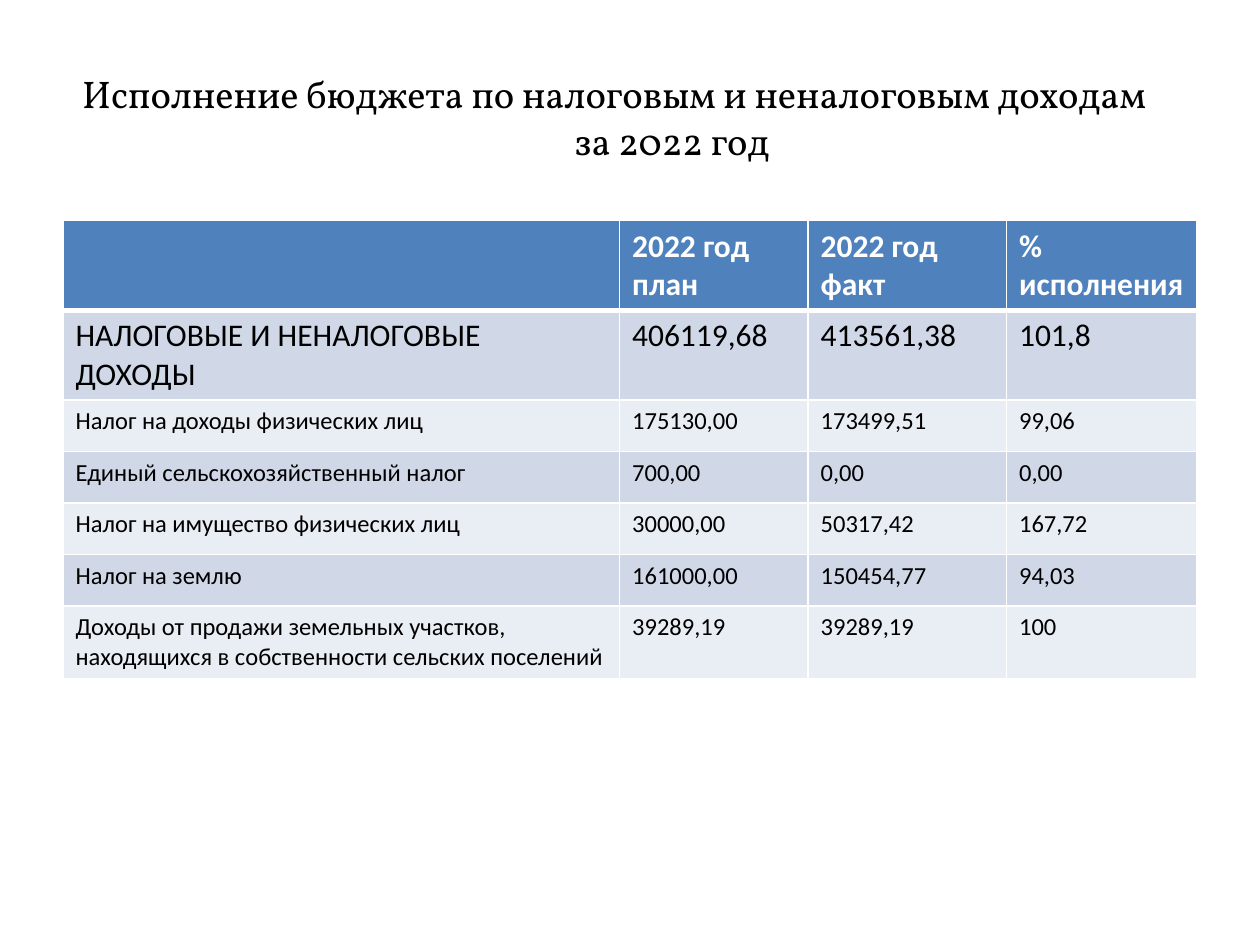
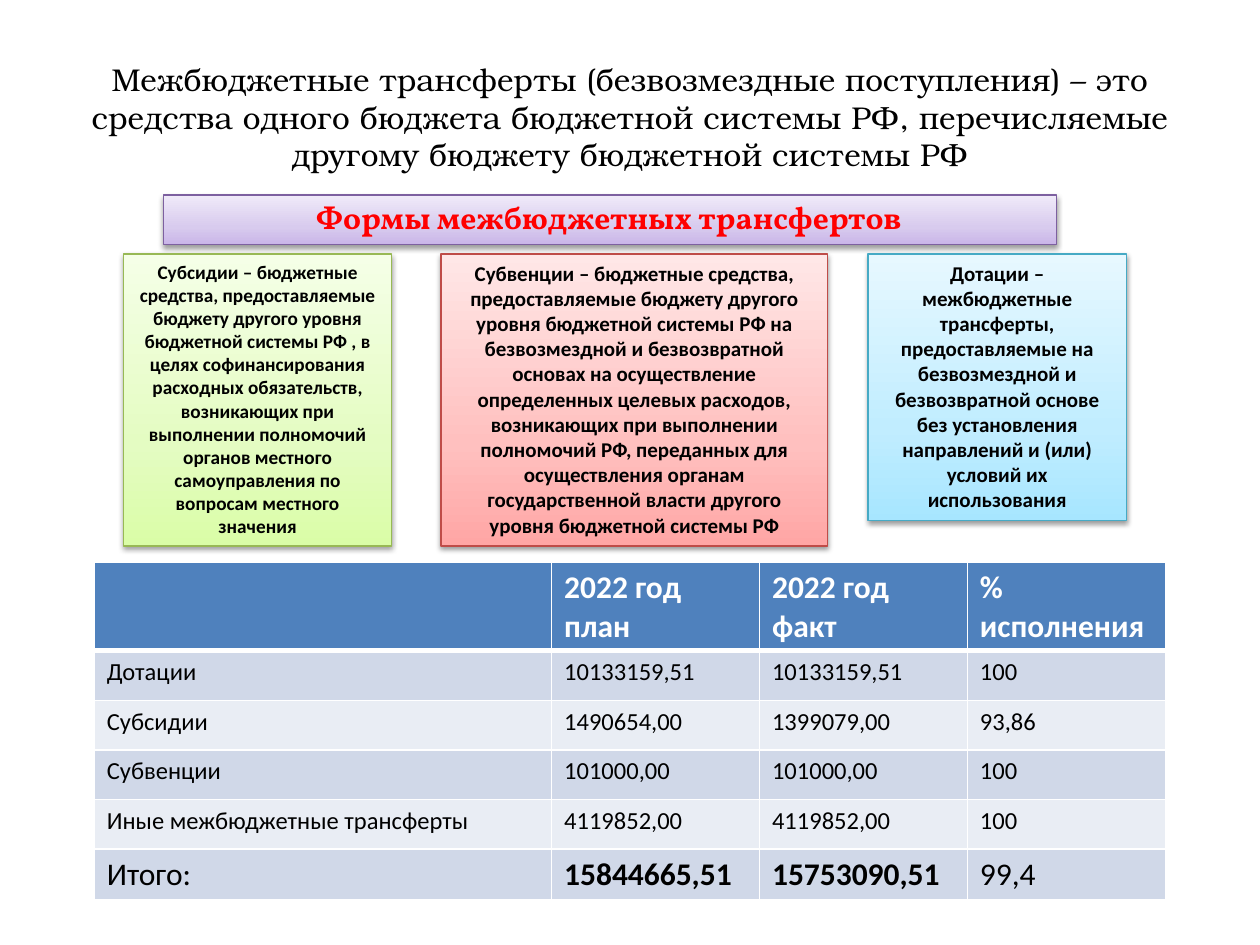
from lxml.etree import SubElement
from pptx import Presentation
from pptx.dml.color import RGBColor
from pptx.enum.shapes import MSO_SHAPE
from pptx.enum.text import MSO_ANCHOR, MSO_AUTO_SIZE, PP_ALIGN
from pptx.oxml import parse_xml
from pptx.oxml.ns import nsdecls, qn
from pptx.util import Cm, Pt

WHITE = RGBColor(0xFF, 0xFF, 0xFF)
BLACK = RGBColor(0x00, 0x00, 0x00)
RED = RGBColor(0xFF, 0x00, 0x00)
HEADER_BLUE = RGBColor(0x4F, 0x81, 0xBD)
BAND_DARK = RGBColor(0xD0, 0xD8, 0xE8)
BAND_LIGHT = RGBColor(0xE9, 0xED, 0xF4)

PURPLE_LINE = RGBColor(0x7D, 0x60, 0xA0)
GREEN_LINE = RGBColor(0x98, 0xB9, 0x55)
PINK_LINE = RGBColor(0xBF, 0x4C, 0x48)
CYAN_LINE = RGBColor(0x46, 0xAA, 0xC5)
PURPLE = (RGBColor(0xC9, 0xB5, 0xE8), RGBColor(0xD8, 0xCB, 0xEE), RGBColor(0xF0, 0xEA, 0xF9))
GREEN = (RGBColor(0xDA, 0xFD, 0xA7), RGBColor(0xE4, 0xFC, 0xC2), RGBColor(0xF5, 0xFF, 0xE7))
PINK = (RGBColor(0xFF, 0xA6, 0xA5), RGBColor(0xFF, 0xC0, 0xBF), RGBColor(0xFF, 0xE7, 0xE7))
CYAN = (RGBColor(0xA7, 0xE6, 0xFF), RGBColor(0xC1, 0xED, 0xFF), RGBColor(0xE7, 0xF8, 0xFF))
GRADIENT_POSITIONS = (0, 35, 100)

HEADER = ("", "2022 год план", "2022 год факт", "% исполнения")
INCOME_TITLE = ("Исполнение бюджета по налоговым и неналоговым доходам", "за 2022 год")
INCOME_ROWS = [
    ("НАЛОГОВЫЕ И НЕНАЛОГОВЫЕ ДОХОДЫ", "406119,68", "413561,38", "101,8"),
    ("Налог на доходы физических лиц", "175130,00", "173499,51", "99,06"),
    ("Единый сельскохозяйственный налог", "700,00", "0,00", "0,00"),
    ("Налог на имущество физических лиц", "30000,00", "50317,42", "167,72"),
    ("Налог на землю", "161000,00", "150454,77", "94,03"),
    ("Доходы от продажи земельных участков, находящихся в собственности сельских поселений",
     "39289,19", "39289,19", "100"),
]

TRANSFER_TITLE = (
    "Межбюджетные трансферты (безвозмездные поступления) – это средства одного бюджета "
    "бюджетной системы РФ, перечисляемые другому бюджету бюджетной системы РФ",
)
TRANSFER_HEADING = "Формы межбюджетных трансфертов"
TRANSFER_FORMS = [
    ("Субсидии – бюджетные средства, предоставляемые бюджету другого уровня бюджетной "
     "системы РФ , в целях софинансирования расходных обязательств, возникающих при "
     "выполнении полномочий органов местного самоуправления по вопросам местного значения",
     11, 2.49, 5.41, 5.89, GREEN, GREEN_LINE),
    ("Субвенции – бюджетные средства, предоставляемые бюджету другого уровня бюджетной "
     "системы РФ на безвозмездной и безвозвратной основах на осуществление определенных "
     "целевых расходов, возникающих при выполнении полномочий РФ, переданных для "
     "осуществления органам государственной власти другого уровня бюджетной системы РФ",
     12, 8.89, 7.8, 5.89, PINK, PINK_LINE),
    ("Дотации – межбюджетные трансферты, предоставляемые на безвозмездной и безвозвратной "
     "основе без установления направлений и (или) условий их использования",
     12, 17.5, 5.21, 5.38, CYAN, CYAN_LINE),
]
TRANSFER_ROWS = [
    ("Дотации", "10133159,51", "10133159,51", "100"),
    ("Субсидии", "1490654,00", "1399079,00", "93,86"),
    ("Субвенции", "101000,00", "101000,00", "100"),
    ("Иные межбюджетные трансферты", "4119852,00", "4119852,00", "100"),
    ("Итого:", "15844665,51", "15753090,51", "99,4"),
]


def write(paragraph, text, size=14, font="Calibri", color=BLACK, bold=False, align=PP_ALIGN.LEFT):
    paragraph.alignment = align
    run = paragraph.add_run()
    run.text = text
    run.font.size = Pt(size)
    run.font.name = font
    run.font.bold = bold
    run.font.color.rgb = color


def add_titled_slide(presentation, lines, size, font):
    slide = presentation.slides.add_slide(presentation.slide_layouts[5])
    title = slide.shapes.title
    title.left, title.top, title.width, title.height = Cm(1.27), Cm(0.76), Cm(22.86), Cm(3.18)
    frame = title.text_frame
    frame.word_wrap = True
    frame.auto_size = MSO_AUTO_SIZE.NONE
    frame.vertical_anchor = MSO_ANCHOR.MIDDLE
    for index, line in enumerate(lines):
        paragraph = frame.add_paragraph() if index else frame.paragraphs[0]
        paragraph.space_before = Pt(0)
        write(paragraph, line, size=size, font=font, align=PP_ALIGN.CENTER)
    return slide


def set_borders(cell, top, bottom):
    properties = cell._tc.get_or_add_tcPr()
    for index, (side, width) in enumerate((("L", 1), ("R", 1), ("T", top), ("B", bottom))):
        properties.insert(index, parse_xml(
            f'<a:ln{side} {nsdecls("a")} w="{Pt(width)}"><a:solidFill>'
            f'<a:srgbClr val="{WHITE}"/></a:solidFill></a:ln{side}>'))


def add_budget_table(slide, rows, left, top, column_widths, row_heights, large_row, bold_columns=()):
    frame = slide.shapes.add_table(len(rows) + 1, len(HEADER), Cm(left), Cm(top),
                                   Cm(sum(column_widths)), Cm(sum(row_heights)))
    table = frame.table
    for column, width in zip(table.columns, column_widths):
        column.width = Cm(width)
    for row, height in zip(table.rows, row_heights):
        row.height = Cm(height)
    for row_index, values in enumerate([HEADER, *rows]):
        is_header = row_index == 0
        is_large = row_index == large_row
        band = BAND_DARK if row_index % 2 else BAND_LIGHT
        for column_index, value in enumerate(values):
            cell = table.cell(row_index, column_index)
            cell.fill.solid()
            cell.fill.fore_color.rgb = HEADER_BLUE if is_header else band
            set_borders(cell, 3 if row_index == 1 else 1, 3 if is_header else 1)
            if value:
                write(cell.text_frame.paragraphs[0], value,
                      size=18 if is_header or is_large else 14,
                      color=WHITE if is_header else BLACK,
                      bold=is_header or (is_large and column_index in bold_columns))


def add_gradient_box(slide, text, left, top, width, height, colors, line_color, **text_format):
    shape = slide.shapes.add_shape(MSO_SHAPE.RECTANGLE, Cm(left), Cm(top), Cm(width), Cm(height))
    shape.fill.gradient()
    shape.fill.gradient_angle = 90
    properties = shape._element.spPr
    stops = properties.find(".//" + qn("a:gsLst"))
    for stop in list(stops):
        stops.remove(stop)
    for position, color in zip(GRADIENT_POSITIONS, colors):
        stop = SubElement(stops, qn("a:gs"), pos=str(position * 1000))
        SubElement(stop, qn("a:srgbClr"), val=str(color))
    shape.line.color.rgb = line_color
    shape.line.width = Pt(0.75)
    shape.shadow.inherit = False
    properties.find(qn("a:effectLst")).append(parse_xml(
        f'<a:outerShdw {nsdecls("a")} blurRad="{Pt(3.1)}" dist="{Pt(1.6)}" dir="5400000" '
        f'rotWithShape="0"><a:srgbClr val="{BLACK}"><a:alpha val="38000"/></a:srgbClr></a:outerShdw>'))
    frame = shape.text_frame
    frame.word_wrap = True
    frame.vertical_anchor = MSO_ANCHOR.TOP
    write(frame.paragraphs[0], text, bold=True, align=PP_ALIGN.CENTER, **text_format)
    return shape


def build_income_slide(presentation):
    slide = add_titled_slide(presentation, INCOME_TITLE, 22, "Vollkorn")
    first_line, second_line = slide.shapes.title.text_frame.paragraphs
    first_line._p.get_or_add_pPr().set("marR", str(Cm(0.64)))
    second_line._p.get_or_add_pPr().set("marL", str(Cm(2.34)))
    add_budget_table(slide, INCOME_ROWS, 1.27, 4.45, (11.22, 3.8, 4, 3.84),
                     [1.04] * 7, large_row=1)


def build_transfer_slide(presentation):
    slide = add_titled_slide(presentation, TRANSFER_TITLE, 18, "TeX Gyre Bonum")
    heading = add_gradient_box(slide, TRANSFER_HEADING, 3.3, 3.93, 18, 1, PURPLE, PURPLE_LINE,
                               size=18, font="Vollkorn", color=RED)
    heading.text_frame.vertical_anchor = MSO_ANCHOR.MIDDLE
    heading.text_frame.margin_left = Cm(0)
    heading.text_frame.margin_right = Cm(0.05)
    heading.text_frame.paragraphs[0].line_spacing = 0.9
    for text, size, left, width, height, colors, line_color in TRANSFER_FORMS:
        box = add_gradient_box(slide, text, left, 5.12, width, height, colors, line_color, size=size)
        box.text_frame.auto_size = MSO_AUTO_SIZE.SHAPE_TO_FIT_TEXT
    add_budget_table(slide, TRANSFER_ROWS, 1.9, 11.34, (9.22, 4.19, 4.19, 3.99),
                     [1.74] + [1] * 5, large_row=5, bold_columns=(1, 2))


def main():
    presentation = Presentation()
    presentation.slide_width = Cm(25.4)
    presentation.slide_height = Cm(19.05)
    build_income_slide(presentation)
    build_transfer_slide(presentation)
    presentation.save("out.pptx")


if __name__ == "__main__":
    main()
